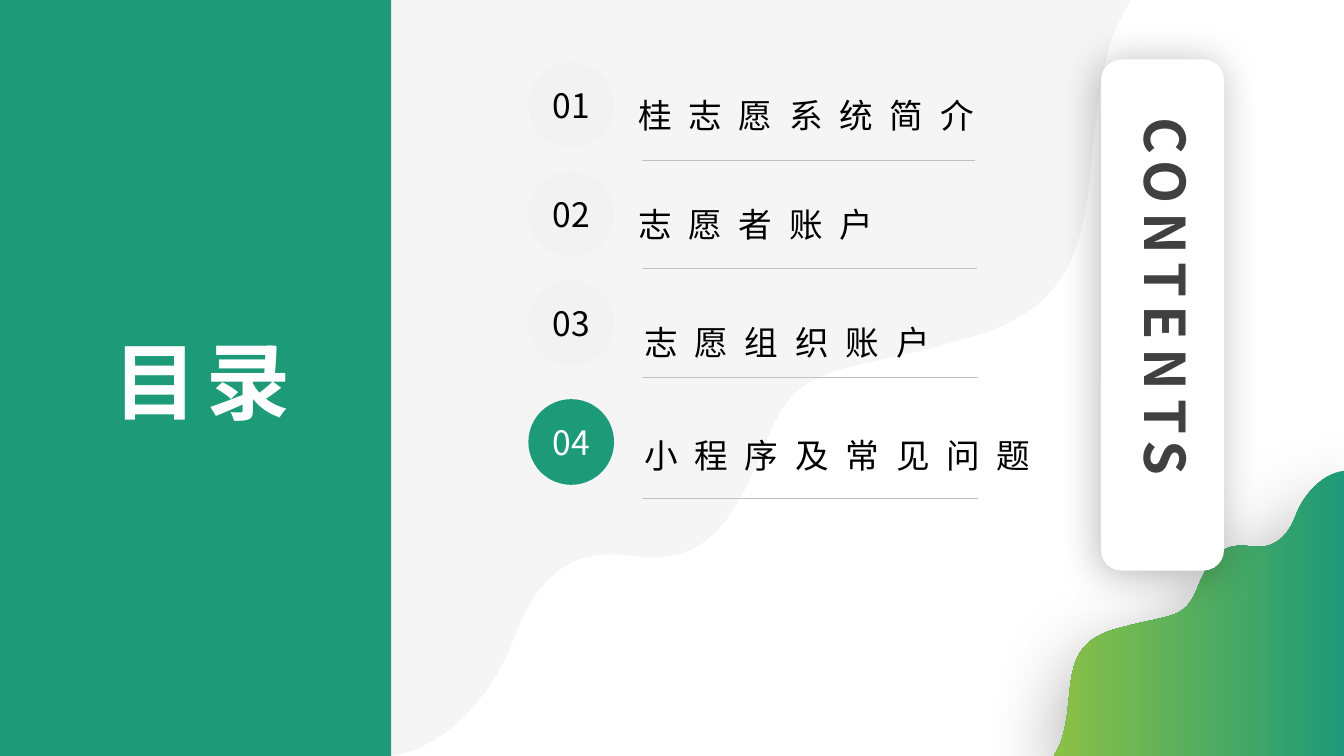
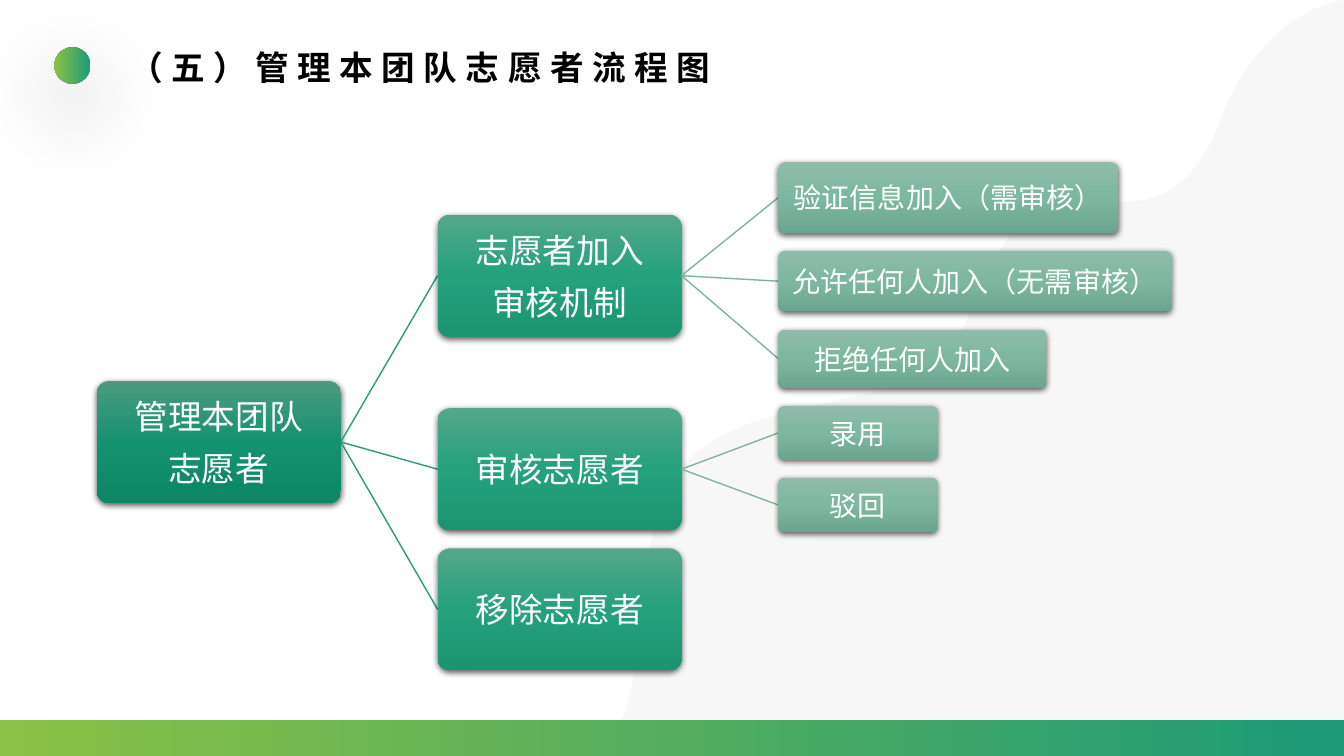
from math import atan2, degrees, hypot

from pptx import Presentation
from pptx.dml.color import RGBColor
from pptx.enum.shapes import MSO_CONNECTOR, MSO_SHAPE
from pptx.enum.text import MSO_ANCHOR as Anchor, MSO_AUTO_SIZE as AutoSize, PP_ALIGN as Align
from pptx.oxml import parse_xml
from pptx.oxml.ns import nsdecls, qn
from pptx.oxml.xmlchemy import OxmlElement
from pptx.util import Inches, Pt

WIDTH, HEIGHT = 13.33, 7.5
FONT = "Noto Sans CJK SC"
GREEN, WHITE, BLACK, PALE = "1D9A78", "FFFFFF", "000000", "F2F2F2"
RULE, CHARCOAL = "BFBFBF", "404040"
BRAND_GRADIENT = ([(0, GREEN), (100, "8BC145")], 180)
SOFT_SHADOW = (40, 60, 20, 90)
CARD_SHADOW = (27, 29, 3, 135)
NODE_SHADOW = (63, 4.5, 1.5, 90)

WAVE_SIZE = (7.34, 7.5)
WAVE_START = (7.34, 0)
WAVE_CURVES = [
    ((6.67, 0.11), (6.26, 0.79), (6.13, 1.15)),
    ((5.93, 1.72), (5.59, 2.08), (4.98, 1.99)),
    ((4.37, 1.9), (4.01, 2.11), (3.63, 3.1)),
    ((3.3, 3.96), (2.95, 3.75), (1.55, 4.17)),
    ((0.16, 4.58), (0.54, 5.74), (0.25, 6.91)),
    ((0.2, 7.14), (0.11, 7.33), (0, 7.5)),
]

CONTENTS = [
    # number, heading, circle top, text left, text top, text width, rule y, rule right
    ("01", "桂志愿系统简介", 0.62, 6.23, 0.81, 3.97, 1.59, 9.67),
    ("02", "志愿者账户", 1.7, 6.23, 1.89, 4.36, 2.66, 9.69),
    ("03", "志愿组织账户", 2.78, 6.29, 3.06, 4.42, 3.74, 9.7),
    ("04", "小程序及常见问题", 3.96, 6.29, 4.19, 4.42, 4.94, 9.7),
]
CURRENT = "04"

LEVELS = [
    {"left": 0.96, "size": 24, "inset": 0.02, "line": None,
     "colors": ("4D9A7F", "149270", "0D8765")},
    {"left": 4.34, "size": 24, "inset": 0.02, "line": "2B9B7A",
     "colors": ("53A88A", "25A17C", "1C9471")},
    {"left": 7.72, "size": 20, "inset": 0.01, "line": "80B4A0",
     "colors": ("8FBCAA", "7DB7A1", "6CA58F")},
]
TREE = ("管理本团队\n志愿者", 3.78, 2.42, 1.21, [
    ("志愿者加入\n审核机制", 2.13, 2.42, 1.21, [
        ("验证信息加入（需审核）", 1.61, 3.37, 0.7, []),
        ("允许任何人加入（无需审核）", 2.49, 3.9, 0.6, []),
        ("拒绝任何人加入", 3.27, 2.66, 0.58, []),
    ]),
    ("审核志愿者", 4.05, 2.42, 1.21, [
        ("录用", 4.03, 1.58, 0.53, []),
        ("驳回", 4.74, 1.58, 0.54, []),
    ]),
    ("移除志愿者", 5.44, 2.42, 1.21, []),
])


def color(value):
    return RGBColor.from_string(value)


def inches(*values):
    return [Inches(value) for value in values]


def paint(shape, fill, alpha=None, shadow=None):
    shape.line.fill.background()
    shape.shadow.inherit = False
    properties = shape.element.spPr
    if isinstance(fill, str):
        shape.fill.solid()
        shape.fill.fore_color.rgb = color(fill)
        if alpha:
            opacity = OxmlElement("a:alpha")
            opacity.set("val", str(alpha * 1000))
            properties.find(qn("a:solidFill"))[0].append(opacity)
    else:
        stops, angle = fill
        stop_xml = "".join(f'<a:gs pos="{position * 1000}"><a:srgbClr val="{value}"/></a:gs>'
                           for position, value in stops)
        shape.fill.gradient()
        properties.replace(properties.find(qn("a:gradFill")), parse_xml(
            f'<a:gradFill {nsdecls("a")} rotWithShape="1"><a:gsLst>{stop_xml}</a:gsLst>'
            f'<a:lin ang="{angle * 60000}" scaled="0"/></a:gradFill>'))
    if shadow:
        strength, blur, distance, direction = shadow
        properties.find(qn("a:effectLst")).append(parse_xml(
            f'<a:outerShdw {nsdecls("a")} blurRad="{Pt(blur)}" dist="{Pt(distance)}" '
            f'dir="{direction * 60000}" algn="ctr" rotWithShape="0"><a:srgbClr val="{BLACK}">'
            f'<a:alpha val="{strength * 1000}"/></a:srgbClr></a:outerShdw>'))


def add_block(page, kind, place, fill, shadow=None, corner=None):
    shape = page.shapes.add_shape(kind, *inches(*place))
    if corner:
        shape.adjustments[0] = corner
    paint(shape, fill, shadow=shadow)
    return shape


def add_rule(page, start, end):
    rule = page.shapes.add_connector(MSO_CONNECTOR.STRAIGHT, *inches(*start, *end))
    rule.line.color.rgb = color(RULE)
    rule.line.width = Pt(0.25)
    rule.element.spPr.append(OxmlElement("a:effectLst"))


def add_branch_line(page, start, end, stroke, band=0.04):
    run, rise = end[0] - start[0], end[1] - start[1]
    length = hypot(run, rise)
    left = (start[0] + end[0] - length) / 2
    middle = (start[1] + end[1]) / 2
    builder = page.shapes.build_freeform(*inches(left, middle), scale=1.0)
    builder.add_line_segments([inches(left + length, middle)], close=False)
    shape = builder.convert_to_shape()
    shape.top, shape.height = inches(middle - band / 2, band)
    outline = next(shape.element.iter(qn("a:path")))
    outline.set("h", str(Inches(band)))
    for point in outline.iter(qn("a:pt")):
        point.set("y", str(Inches(band / 2)))
    shape.rotation = degrees(atan2(rise, run))
    shape.fill.background()
    shape.line.color.rgb = color(stroke)
    shape.line.width = Pt(1)
    shape.shadow.inherit = False


def write(shape, text, size, ink, font=FONT, bold=False, tracking=0, align=Align.LEFT,
          anchor=Anchor.TOP, insets=None, leading=None, after=None, grow=False):
    frame = shape.text_frame
    frame.text = text
    frame.word_wrap = True
    frame.vertical_anchor = anchor
    if grow:
        frame.auto_size = AutoSize.SHAPE_TO_FIT_TEXT
    if insets:
        (frame.margin_left, frame.margin_top,
         frame.margin_right, frame.margin_bottom) = inches(*insets)
    for para in frame.paragraphs:
        para.alignment = align
        if leading:
            para.line_spacing = leading
        if after:
            para.space_after = Pt(0)
            spacing = para._p.pPr.find(qn("a:spcAft"))
            percent = OxmlElement("a:spcPct")
            percent.set("val", str(after * 1000))
            spacing.replace(spacing[0], percent)
        for span in para.runs:
            span.font.size = Pt(size)
            span.font.bold = bold
            span.font.name = font
            span.font.color.rgb = color(ink)
            properties = span._r.get_or_add_rPr()
            east_asian = OxmlElement("a:ea")
            east_asian.set("typeface", FONT)
            properties.find(qn("a:latin")).addnext(east_asian)
            if tracking:
                properties.set("spc", str(tracking * 100))


def add_text(page, place, text, size, ink, **style):
    box = page.shapes.add_textbox(*inches(*place))
    write(box, text, size, ink, **style)
    return box


def add_wave(page, place, fill, **style):
    left, top, width, height = place

    def fit(point):
        return inches(point[0] / WAVE_SIZE[0] * width, point[1] / WAVE_SIZE[1] * height)

    corners = [fit(point) for point in (WAVE_START, *(curve[-1] for curve in WAVE_CURVES), WAVE_SIZE)]
    builder = page.shapes.build_freeform(*corners[0], scale=1.0)
    builder.add_line_segments(corners[1:], close=True)
    shape = builder.convert_to_shape(*inches(left, top))
    outline = next(shape.element.iter(qn("a:path")))
    for segment, curve in zip(outline.findall(qn("a:lnTo")), WAVE_CURVES):
        points = "".join('<a:pt x="{}" y="{}"/>'.format(*fit(point)) for point in curve)
        outline.replace(segment, parse_xml(
            f'<a:cubicBezTo {nsdecls("a")}>{points}</a:cubicBezTo>'))
    paint(shape, fill, **style)
    return shape


def build_contents(page):
    backdrop = add_wave(page, (3.88, 0, *WAVE_SIZE), PALE, alpha=75)
    backdrop.rotation = 180
    add_wave(page, (10.45, 4.67, 2.88, 2.83), BRAND_GRADIENT, shadow=SOFT_SHADOW)
    add_block(page, MSO_SHAPE.RECTANGLE, (0, 0, 3.88, HEIGHT), GREEN)
    add_block(page, MSO_SHAPE.ROUNDED_RECTANGLE, (10.92, 0.59, 1.22, 5.07), WHITE, CARD_SHADOW)
    label = add_text(page, (11.09, 1.07, 0.87, 4.21), "CONTENTS", 40, CHARCOAL,
                     bold=True, tracking=6, align=Align.CENTER, grow=True)
    label.text_frame._txBody.bodyPr.set("vert", "eaVert")
    add_text(page, (0.77, 3.26, 2.35, 1.01), "目录", 60, WHITE, bold=True, tracking=6,
             align=Align.CENTER, anchor=Anchor.MIDDLE, insets=(0.12, 0, 0, 0), grow=True)
    for number, heading, top, text_left, text_top, text_width, rule_y, rule_right in CONTENTS:
        fill, ink = (GREEN, WHITE) if number == CURRENT else (PALE, BLACK)
        circle = add_block(page, MSO_SHAPE.OVAL, (5.24, top, 0.85, 0.85), fill)
        write(circle, number, 24, ink, align=Align.CENTER, anchor=Anchor.MIDDLE)
        add_text(page, (text_left, text_top, text_width, 0.47), heading, 24, BLACK,
                 tracking=12, leading=1.2)
        add_rule(page, (6.37, rule_y), (rule_right, rule_y))


def add_branch(page, node, depth=0, origin=None):
    text, top, width, height, children = node
    level = LEVELS[depth]
    left, middle = level["left"], top + height / 2
    if origin:
        add_branch_line(page, origin, (left, middle), level["line"])
    stops = list(zip((0, 50, 100), level["colors"]))
    shape = add_block(page, MSO_SHAPE.ROUNDED_RECTANGLE, (left, top, width, height),
                      (stops, 90), NODE_SHADOW, corner=0.1)
    write(shape, text, level["size"], WHITE, align=Align.CENTER, anchor=Anchor.MIDDLE,
          insets=[level["inset"]] * 4, after=35)
    for child in children:
        add_branch(page, child, depth + 1, (left + width, middle))


def build_flow(page):
    add_wave(page, (5.99, 0, *WAVE_SIZE), PALE, alpha=55)
    add_block(page, MSO_SHAPE.OVAL, (0.54, 0.47, 0.36, 0.36), BRAND_GRADIENT, SOFT_SHADOW)
    add_block(page, MSO_SHAPE.RECTANGLE, (0, 7.14, WIDTH, 0.36), BRAND_GRADIENT)
    add_branch(page, TREE)
    add_text(page, (1.19, 0.42, 10.93, 0.5), "（五）管理本团队志愿者流程图", 24, BLACK,
             font="Times New Roman", bold=True, tracking=6, grow=True)


def main():
    """Build the contents slide and the volunteer management flow chart."""
    deck = Presentation()
    deck.slide_width, deck.slide_height = inches(WIDTH, HEIGHT)
    for build in (build_contents, build_flow):
        build(deck.slides.add_slide(deck.slide_layouts[6]))
    deck.save("out.pptx")


if __name__ == "__main__":
    main()
